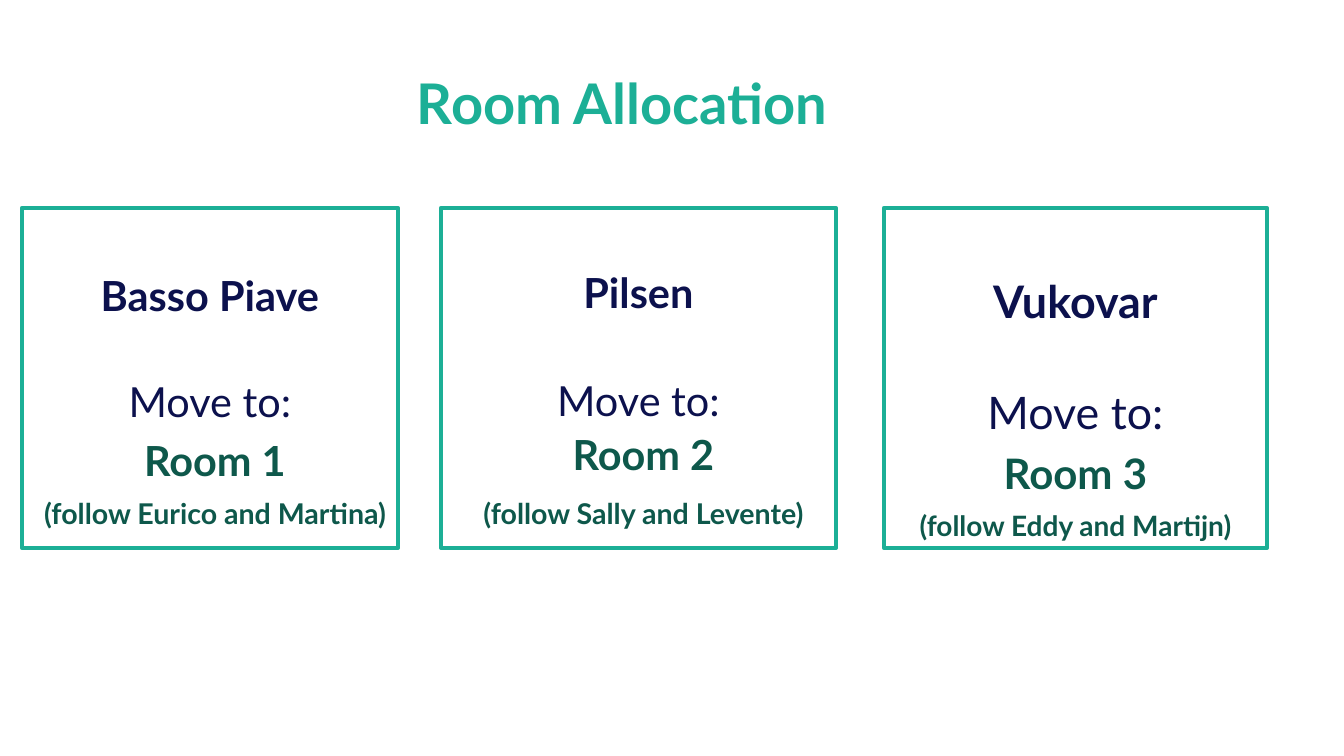
from pptx import Presentation
from pptx.dml.color import RGBColor
from pptx.enum.shapes import MSO_SHAPE as Shape
from pptx.enum.text import MSO_ANCHOR as Anchor, PP_ALIGN as Align
from pptx.util import Pt

PX = 914400 / 100.8
FONT = "Lato"
COLORS = {"teal": "1CAF96", "navy": "0C114D", "green": "0E584B"}

ROOMS = [
    {"box": (22, 208, 376, 340), "top": 68, "spacing": 0.9, "indent": 10,
     "lines": ["Basso Piave", "Move to:", "Room 1", "(follow Eurico and Martina)"],
     "sizes": [29.6, 29.6, 29.6, 20.4], "gaps": [0, 43.7, 10, 10]},
    {"box": (441, 208, 395, 340), "top": 69, "spacing": 0.8, "indent": 10,
     "lines": ["Pilsen", "Move to:", "Room 2", "(follow Sally and Levente)"],
     "sizes": [29.6, 29.6, 29.6, 20.4], "gaps": [0, 48.7, 10, 17]},
    {"box": (884, 208, 383, 340), "top": 72, "spacing": 0.9, "indent": 0,
     "lines": ["Vukovar", "Move to:", "Room 3", "(follow Eddy and Martijn)"],
     "sizes": [32, 32, 30, 20], "gaps": [0, 44.7, 10, 10]},
]
LINE_STYLES = [("navy", True), ("navy", False), ("green", True), ("green", True)]


def px(length):
    return round(length * PX)


def color(name):
    return RGBColor.from_string(COLORS[name])


def format_text(paragraph, size, color_name, bold, spacing):
    paragraph.line_spacing = spacing
    for run in paragraph.runs:
        run.font.name = FONT
        run.font.size = Pt(size)
        run.font.bold = bold
        run.font.color.rgb = color(color_name)


def set_margins(frame, side, top):
    frame.word_wrap = True
    frame.vertical_anchor = Anchor.TOP
    frame.margin_left = frame.margin_right = px(side)
    frame.margin_top = px(top)
    frame.margin_bottom = 0


def add_title(slide, text, box):
    frame = slide.shapes.add_textbox(*map(px, box)).text_frame
    set_margins(frame, 10, 5)
    frame.text = text
    format_text(frame.paragraphs[0], 40, "teal", True, 0.9)


def add_room(slide, room):
    shape = slide.shapes.add_shape(Shape.RECTANGLE, *map(px, room["box"]))
    shape.shadow.inherit = False
    shape.fill.background()
    shape.line.color.rgb = color("teal")
    shape.line.width = Pt(3)
    frame = shape.text_frame
    set_margins(frame, 0, room["top"])
    frame.text = "\n".join(room["lines"])
    rows = zip(frame.paragraphs, room["sizes"], room["gaps"], LINE_STYLES)
    for paragraph, size, gap, (color_name, bold) in rows:
        paragraph.alignment = Align.CENTER
        paragraph.space_before = Pt(gap)
        format_text(paragraph, size, color_name, bold, room["spacing"])
        if color_name == "green":
            paragraph._p.get_or_add_pPr().set("marL", str(px(room["indent"])))


def main():
    presentation = Presentation()
    presentation.slide_width = px(1344)
    presentation.slide_height = px(756)
    slide = presentation.slides.add_slide(presentation.slide_layouts[6])
    add_title(slide, "Room Allocation", (407, 71, 624, 70))
    for room in ROOMS:
        add_room(slide, room)
    presentation.save("out.pptx")


if __name__ == "__main__":
    main()
